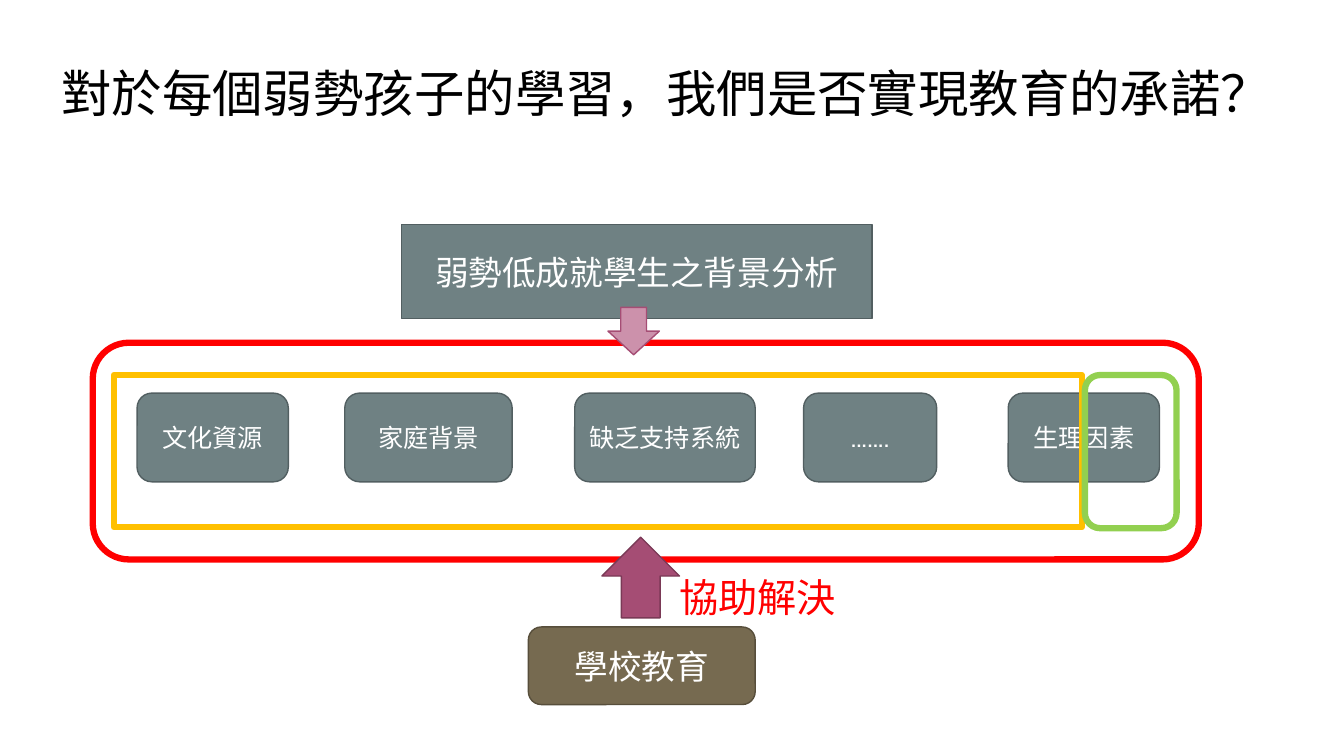
import pptx
import pptx.util
import pptx.dml.color
import pptx.enum.shapes
import pptx.enum.text
import pptx.oxml.ns
import lxml.etree

Inches = pptx.util.Inches
KIND = pptx.enum.shapes.MSO_SHAPE
ALIGN = pptx.enum.text.PP_ALIGN
ANCHOR = pptx.enum.text.MSO_ANCHOR

COLORS = {
    "black": "000000", "white": "FFFFFF", "red": "FF0000",
    "gold": "FFC000", "green": "92D050",
    "slate": "6F8183", "slate edge": "525F61",
    "brown": "766A50", "brown edge": "574E3B",
    "pink": "CC91AB", "plum": "A54D74", "plum edge": "7A3956",
}
HEAD, BODY, LABEL = "Noto Sans CJK JP", "Noto Sans CJK SC", "Roboto Slab"


def color(name):
    return pptx.dml.color.RGBColor.from_string(COLORS[name])


class Board:
    def __init__(self, deck):
        self.slide = deck.slides.add_slide(deck.slide_layouts[6])

    def letter(self, frame, text, size, font, ink, align, anchor):
        """Put one styled paragraph into a text frame."""
        frame.word_wrap = True
        frame.vertical_anchor = anchor
        para = frame.paragraphs[0]
        para.text = text
        para.alignment = align
        para.font.size = pptx.util.Pt(size)
        para.font.color.rgb = color(ink)
        para.font.name = font
        latin = para.font._element.find(pptx.oxml.ns.qn("a:latin"))
        east = lxml.etree.Element(pptx.oxml.ns.qn("a:ea"), typeface=font)
        latin.addnext(east)
        return para

    def shape(self, kind, box, fill, edge, width=1):
        item = self.slide.shapes.add_shape(kind, *map(Inches, box))
        item.shadow.inherit = False
        if fill:
            item.fill.solid()
            item.fill.fore_color.rgb = color(fill)
        else:
            item.fill.background()
        item.line.color.rgb = color(edge)
        item.line.width = pptx.util.Pt(width)
        return item

    def card(self, kind, box, text, size, font, fill="slate"):
        """Draw a filled shape with centred white text."""
        frame = self.shape(kind, box, fill, fill + " edge").text_frame
        frame.margin_left = frame.margin_right = Inches(0.05)
        self.letter(frame, text, size, font, "white", ALIGN.CENTER, ANCHOR.MIDDLE)

    def ring(self, kind, box, edge):
        """Draw a thick outline without fill."""
        self.shape(kind, box, None, edge, 4.5)

    def text(self, box, text, size, font, ink, anchor=ANCHOR.TOP):
        frame = self.slide.shapes.add_textbox(*map(Inches, box)).text_frame
        return self.letter(frame, text, size, font, ink, ALIGN.LEFT, anchor)


def main():
    deck = pptx.Presentation()
    deck.slide_width, deck.slide_height = Inches(13.33), Inches(7.5)
    board = Board(deck)

    title = board.text((0.51, 0.58, 12.3, 0.75),
                       "對於每個弱勢孩子的學習，我們是否實現教育的承諾？",
                       36, HEAD, "black", ANCHOR.MIDDLE)
    title.line_spacing = 0.9

    board.card(KIND.RECTANGLE, (3.98, 2.23, 4.67, 0.93),
               "弱勢低成就學生之背景分析", 24, BODY)
    causes = [(1.36, 1.5, "文化資源"), (3.42, 1.66, "家庭背景"),
              (5.7, 1.79, "缺乏支持系統"), (7.97, 1.32, "……."),
              (10, 1.5, "生理因素")]
    for left, width, cause in causes:
        board.card(KIND.ROUNDED_RECTANGLE, (left, 3.9, width, 0.88),
                   cause, 18, LABEL)
    board.card(KIND.ROUNDED_RECTANGLE, (5.24, 6.22, 2.25, 0.77),
               "學校教育", 24, BODY, "brown")

    board.ring(KIND.RECTANGLE, (1.13, 3.72, 9.6, 1.51), "gold")
    board.ring(KIND.ROUNDED_RECTANGLE, (0.92, 3.4, 10.97, 2.15), "red")
    board.shape(KIND.DOWN_ARROW, (6.03, 3.05, 0.51, 0.47), "pink", "plum")
    board.shape(KIND.UP_ARROW, (5.97, 5.33, 0.77, 0.8), "plum", "plum edge")
    board.text((6.64, 5.64, 2.01, 0.57), "協助解決", 28, LABEL, "red")
    board.ring(KIND.ROUNDED_RECTANGLE, (10.76, 3.72, 0.91, 1.52), "green")

    deck.save("out.pptx")


if __name__ == "__main__":
    main()
